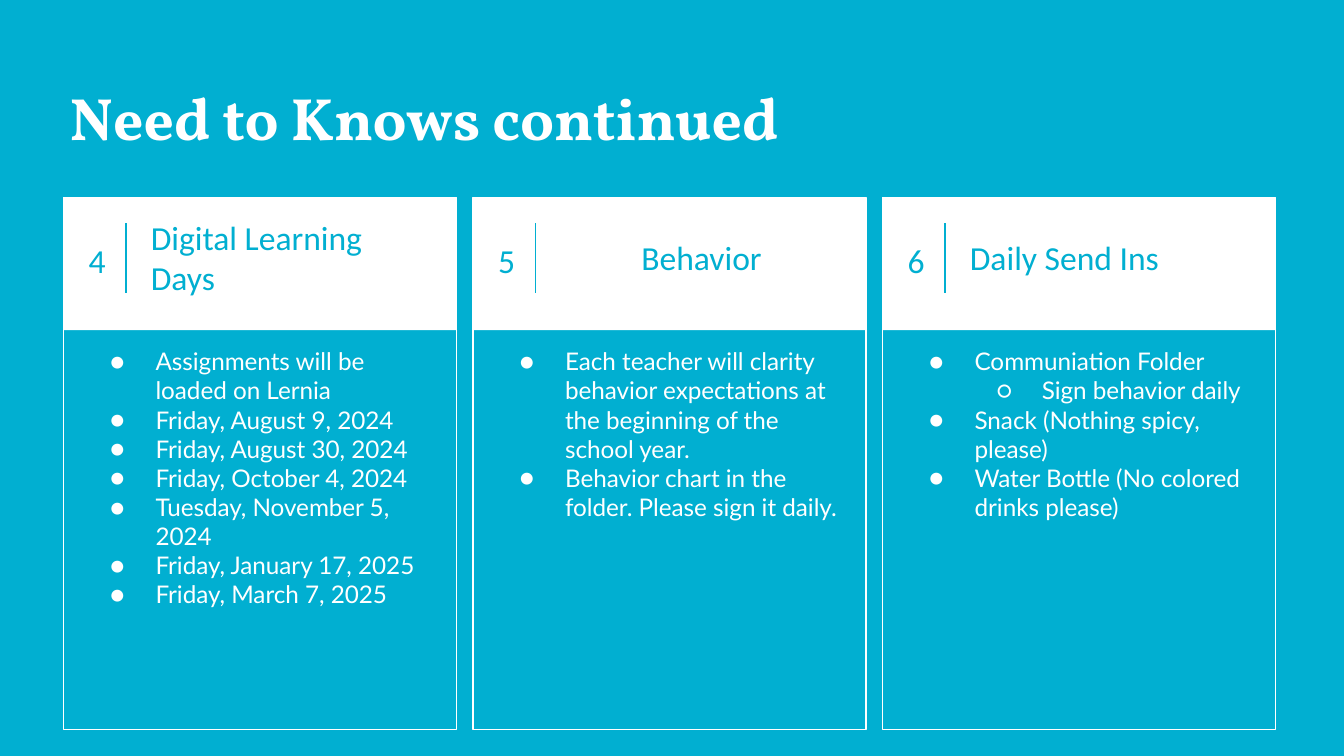
import pptx
import pptx.dml.color
import pptx.enum.shapes
import pptx.enum.text
import pptx.oxml.ns
import pptx.util
from lxml import etree

Cm, Pt = pptx.util.Cm, pptx.util.Pt
RGBColor = pptx.dml.color.RGBColor
PP_ALIGN = pptx.enum.text.PP_ALIGN
ANCHOR = pptx.enum.text.MSO_ANCHOR
qn = pptx.oxml.ns.qn

TEAL = RGBColor(0x01, 0xAF, 0xD1)
WHITE = RGBColor(0xFF, 0xFF, 0xFF)

TITLE = "Need to Knows continued"
# number, heading, heading alignment, [(level, item)]
CARDS = [
    ("4", "Digital Learning Days", PP_ALIGN.LEFT, [
        (0, "Assignments will be loaded on Lernia"),
        (0, "Friday, August 9, 2024"),
        (0, "Friday, August 30, 2024"),
        (0, "Friday, October 4, 2024"),
        (0, "Tuesday, November 5, 2024"),
        (0, "Friday, January 17, 2025"),
        (0, "Friday, March 7, 2025"),
    ]),
    ("5", "Behavior", PP_ALIGN.CENTER, [
        (0, "Each teacher will clarity behavior expectations at the "
            "beginning of the school year."),
        (0, "Behavior chart in the folder. Please sign it daily."),
    ]),
    ("6", "Daily Send Ins", PP_ALIGN.LEFT, [
        (0, "Communiation Folder"),
        (1, "Sign behavior daily"),
        (0, "Snack (Nothing spicy, please)"),
        (0, "Water Bottle (No colored drinks please)"),
    ]),
]
BULLETS = "●○"

CARD_LEFT, CARD_TOP, CARD_PITCH = 1.2, 3.73, 7.74
CARD_W, CARD_H, HEADER_H = 7.43, 10.06, 2.51


def add_text(s, box, lines, font, size, color, bold=False,
             align=PP_ALIGN.LEFT, anchor=ANCHOR.TOP):
    sp = s.shapes.add_textbox(*map(Cm, box))
    tf = sp.text_frame
    tf.word_wrap = True
    tf.vertical_anchor = anchor
    tf.margin_left = tf.margin_right = Cm(0.25)
    tf.margin_top = tf.margin_bottom = Cm(0.25)
    tf.text = "\n".join(lines)
    for p in tf.paragraphs:
        p.alignment = align
        for r in p.runs:
            r.font.name, r.font.size, r.font.bold = font, Pt(size), bold
            r.font.color.rgb = color
    return tf


def add_bullet(p, level):
    p.level = level
    pPr = p._p.get_or_add_pPr()
    pPr.set("marL", str(Cm(1.27 * (level + 1))))
    pPr.set("indent", str(Cm(-0.86)))
    clr = etree.SubElement(pPr, qn("a:buClr"))
    etree.SubElement(clr, qn("a:srgbClr")).set("val", str(WHITE))
    etree.SubElement(pPr, qn("a:buFont")).set("typeface", "Lato")
    etree.SubElement(pPr, qn("a:buChar")).set("char", BULLETS[level])


def add_rect(s, left, height):
    sp = s.shapes.add_shape(pptx.enum.shapes.MSO_SHAPE.RECTANGLE,
                            Cm(left), Cm(CARD_TOP), Cm(CARD_W), Cm(height))
    sp.shadow.inherit = False
    return sp


def add_card(s, left, number, heading, align, items):
    frame = add_rect(s, left, CARD_H)
    frame.fill.background()
    frame.line.color.rgb = WHITE
    frame.line.width = Pt(0.75)
    header = add_rect(s, left, HEADER_H)
    header.fill.solid()
    header.fill.fore_color.rgb = WHITE
    header.line.fill.background()

    tf = add_text(s, (left + 0.15, 3.71, 0.97, 2.29), [number], "Calibri", 18,
                  TEAL, align=PP_ALIGN.CENTER, anchor=ANCHOR.MIDDLE)
    tf.paragraphs[0].line_spacing = 1.15

    x = Cm(left + 1.18)
    divider = s.shapes.add_connector(pptx.enum.shapes.MSO_CONNECTOR.STRAIGHT,
                                     x, Cm(4.22), x, Cm(5.54))
    divider.line.color.rgb = TEAL
    divider.line.width = Pt(0.75)
    etree.SubElement(divider._element.spPr, qn("a:effectLst"))

    add_text(s, (left + 1.4, 3.72, 5.84, 2.29), [heading], "Calibri", 18,
             TEAL, align=align, anchor=ANCHOR.MIDDLE)

    tf = add_text(s, (left + 0.22, 6.3, 7.04, 6.6),
                  [text for _, text in items], "Lato", 13, WHITE)
    for p, (level, _) in zip(tf.paragraphs, items):
        add_bullet(p, level)


def main():
    prs = pptx.Presentation()
    prs.slide_width, prs.slide_height = Cm(25.4), Cm(14.29)
    s = prs.slides.add_slide(prs.slide_layouts[6])
    s.background.fill.solid()
    s.background.fill.fore_color.rgb = TEAL

    add_text(s, (1.07, 1.27, 23.24, 1.9), [TITLE], "Vollkorn", 32, WHITE,
             bold=True)
    for i, card in enumerate(CARDS):
        add_card(s, CARD_LEFT + i * CARD_PITCH, *card)
    prs.save("out.pptx")


if __name__ == "__main__":
    main()
